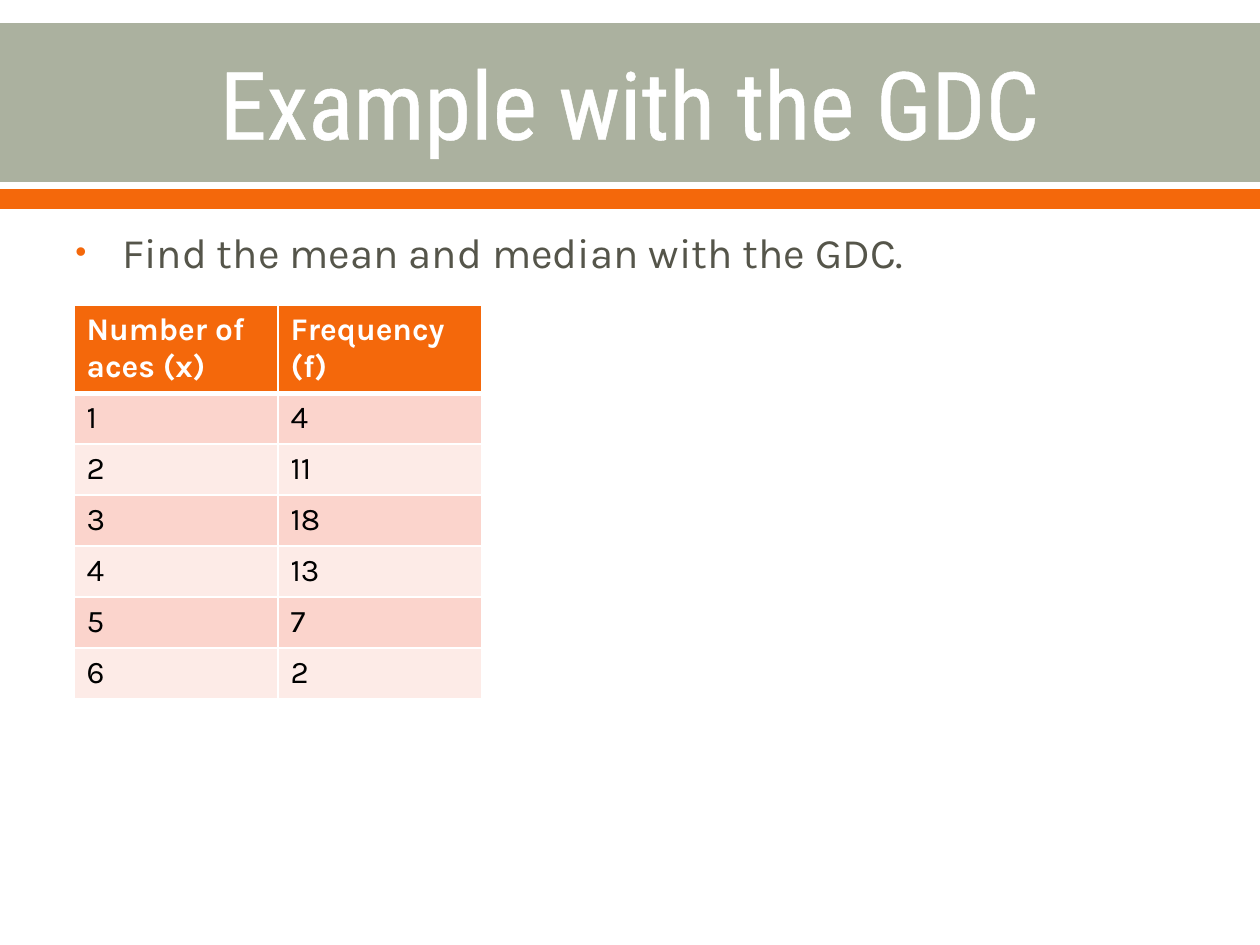
from lxml.etree import SubElement
from pptx import Presentation
from pptx.dml.color import RGBColor
from pptx.enum.shapes import MSO_SHAPE
from pptx.enum.text import MSO_ANCHOR, PP_ALIGN
from pptx.oxml import parse_xml
from pptx.oxml.ns import nsdecls, qn
from pptx.util import Emu, Pt

SCALE = 914400 / 126
WHITE = RGBColor(0xFF, 0xFF, 0xFF)
BLACK = RGBColor(0x00, 0x00, 0x00)
SAGE = RGBColor(0xAB, 0xB1, 0x9F)
ORANGE = RGBColor(0xF4, 0x68, 0x0B)
OLIVE = RGBColor(0x55, 0x55, 0x4A)
PINK = RGBColor(0xFB, 0xD4, 0xCC)
PALE_PINK = RGBColor(0xFD, 0xEB, 0xE7)


def px(*lengths):
    return [Emu(round(length * SCALE)) for length in lengths]


def format_runs(paragraph, font_name, size, color, bold=False):
    for run in paragraph.runs:
        run.font.name = font_name
        run.font.size = Pt(size)
        run.font.color.rgb = color
        run.font.bold = bold


presentation = Presentation()
presentation.slide_width, presentation.slide_height = px(1260, 945)
slide = presentation.slides.add_slide(presentation.slide_layouts[6])

# Title band and accent stripe
for top, height, color in [(23, 159, SAGE), (189, 20, ORANGE)]:
    band = slide.shapes.add_shape(MSO_SHAPE.RECTANGLE, *px(0, top, 1260, height))
    band.shadow.inherit = False
    band.fill.solid()
    band.fill.fore_color.rgb = color
    band.line.fill.background()

# Title with a thin white outline
title = slide.shapes.add_textbox(*px(63, 25, 1134, 154))
title.text_frame.word_wrap = True
title.text_frame.vertical_anchor = MSO_ANCHOR.MIDDLE
title.text_frame.text = "Example with the GDC"
paragraph = title.text_frame.paragraphs[0]
paragraph.alignment = PP_ALIGN.CENTER
format_runs(paragraph, "Roboto Condensed", 54, WHITE)
outline = parse_xml(
    f'<a:ln {nsdecls("a")} w="{Pt(1.1)}"><a:solidFill>'
    f'<a:srgbClr val="{WHITE}"/></a:solidFill></a:ln>')
paragraph.runs[0].font._element.insert(0, outline)

# Bulleted task
body = slide.shapes.add_textbox(*px(63, 220, 1134, 624))
body.text_frame.word_wrap = True
body.text_frame.text = "Find the mean and median with the GDC."
paragraph = body.text_frame.paragraphs[0]
paragraph.space_before = Pt(5)
format_runs(paragraph, "Karla", 24, OLIVE)
properties = paragraph._p.get_or_add_pPr()
indent = px(47)[0]
properties.set("marL", str(indent))
properties.set("indent", str(-indent))
bullet_color = SubElement(properties, qn("a:buClr"))
SubElement(bullet_color, qn("a:srgbClr"), val=str(ORANGE))
SubElement(properties, qn("a:buSzPct"), val="75000")
SubElement(properties, qn("a:buFont"), typeface="Arial")
SubElement(properties, qn("a:buChar"), char="•")

# Frequency table
rows = [("Number of aces (x)", "Frequency\n(f)"),
        ("1", "4"), ("2", "11"), ("3", "18"),
        ("4", "13"), ("5", "7"), ("6", "2")]
frame = slide.shapes.add_table(len(rows), 2, *px(74, 305, 408, 392))
table = frame.table
for column in table.columns:
    column.width = px(204)[0]

for row_index, values in enumerate(rows):
    is_header = row_index == 0
    table.rows[row_index].height = px(86 if is_header else 51)[0]
    if is_header:
        fill, text_color = ORANGE, WHITE
    else:
        fill, text_color = (PINK if row_index % 2 else PALE_PINK), BLACK
    for column_index, value in enumerate(values):
        cell = table.cell(row_index, column_index)
        cell.text_frame.text = value
        for paragraph in cell.text_frame.paragraphs:
            format_runs(paragraph, "Karla", 18, text_color, is_header)

        # White rules, thicker between the header and the first row
        cell_properties = cell._tc.get_or_add_tcPr()
        for side in ("L", "R", "T", "B"):
            thick = (row_index, side) in [(0, "B"), (1, "T")]
            border = SubElement(cell_properties, qn(f"a:ln{side}"),
                                w=str(Pt(3 if thick else 1)))
            border_fill = SubElement(border, qn("a:solidFill"))
            SubElement(border_fill, qn("a:srgbClr"), val=str(WHITE))
        cell.fill.solid()
        cell.fill.fore_color.rgb = fill

presentation.save("out.pptx")
